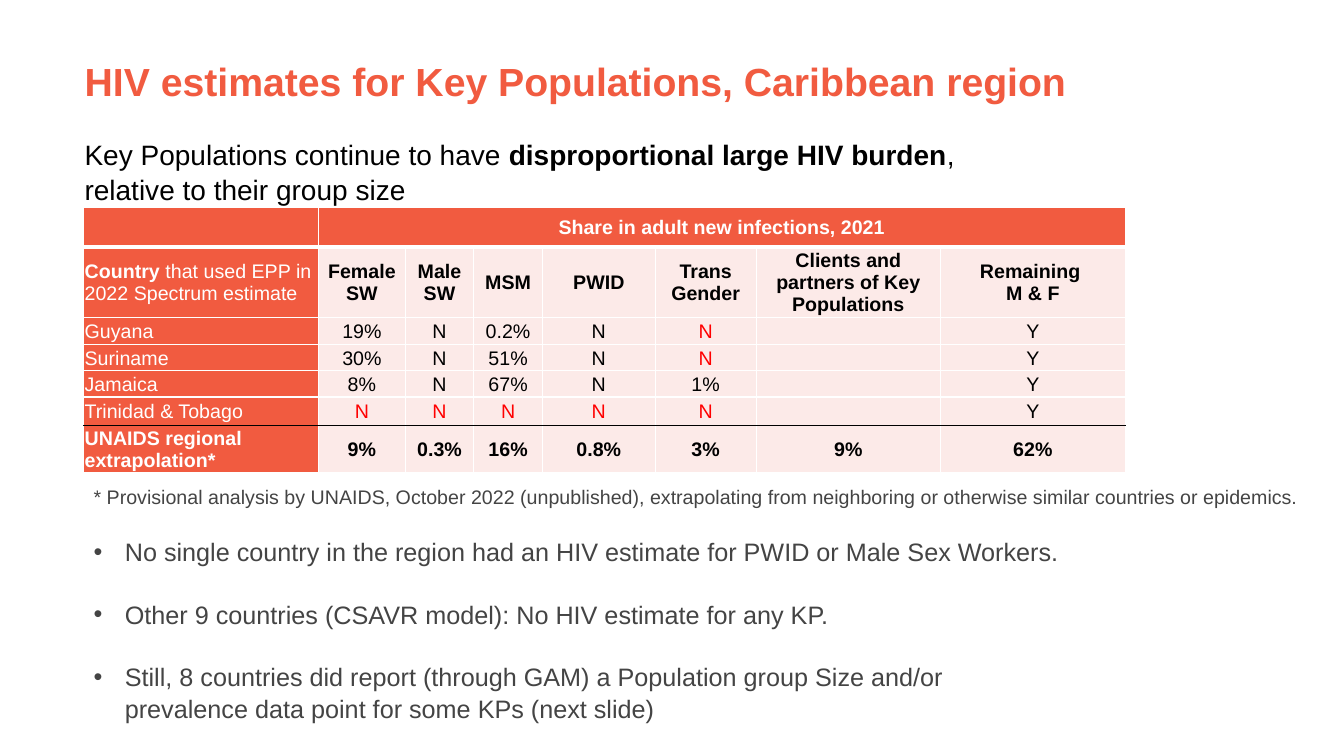
from pptx import Presentation
from pptx.dml.color import RGBColor
from pptx.enum.text import MSO_ANCHOR, MSO_AUTO_SIZE, PP_ALIGN
from pptx.oxml.ns import qn
from pptx.util import Emu, Pt
from lxml import etree

LEFT, CENTER = PP_ALIGN.LEFT, PP_ALIGN.CENTER
TOP, MIDDLE = MSO_ANCHOR.TOP, MSO_ANCHOR.MIDDLE
NO_FIT = MSO_AUTO_SIZE.NONE
TITLE_ONLY = 5
EMU_PER_PX = 9144
CORAL, BLUSH, WHITE = "F15B40", "FCEAE8", "FFFFFF"
BLACK, GREY, RED = "000000", "444444", "FF0000"

COLUMN_WIDTHS = [233, 86, 68, 68, 112, 100, 183, 183]
ROW_HEIGHTS = [39, 70, 27, 26, 26, 28, 47]
ROWS = [
    ["", "Share in adult new infections, 2021", "", "", "", "", "", ""],
    ["**Country** that used EPP in 2022 Spectrum estimate", "Female SW", "Male SW",
     "MSM", "PWID", "Trans Gender", "Clients and partners of Key Populations",
     "Remaining \nM & F"],
    ["Guyana", "19%", "N", "0.2%", "N", "N", "", "Y"],
    ["Suriname", "30%", "N", "51%", "N", "N", "", "Y"],
    ["Jamaica", "8%", "N", "67%", "N", "1%", "", "Y"],
    ["Trinidad & Tobago", "N", "N", "N", "N", "N", "", "Y"],
    ["UNAIDS regional extrapolation*", "9%", "0.3%", "16%", "0.8%", "3%", "9%", "62%"],
]
HEADER, LABELS, TRINIDAD, REGIONAL = 0, 1, 5, 6
RED_CELLS = {(2, 5), (3, 5)} | {(TRINIDAD, column) for column in range(1, 6)}
FOOTNOTE = ("* Provisional analysis by UNAIDS, October 2022 (unpublished), extrapolating "
            "from neighboring or otherwise similar countries or epidemics.")
FINDINGS = [
    ("No single country in the region had an HIV estimate for PWID or Male Sex Workers.", 19),
    ("Other 9 countries (CSAVR model): No HIV estimate for any KP.", 22),
    ("Still, 8 countries did report (through GAM) a Population group Size and/or \n"
     "prevalence data point for some KPs (next slide)", 22),
]


def px(length):
    """Turn whole pixels into EMU."""
    return Emu(length * EMU_PER_PX)


def color(value):
    """Turn a hex string into a colour."""
    return RGBColor.from_string(value)


class Page:
    """A slide together with its text and table style."""

    font = "Arial"
    line_spacing = 1.05
    indent = 31

    def __init__(self, deck):
        """Add a title-only slide to the deck."""
        self.slide = deck.slides.add_slide(deck.slide_layouts[TITLE_ONLY])

    def fill_para(self, para, text, size, ink, bold=False, align=LEFT):
        """Fill a paragraph, with double asterisks around bold spans."""
        para.alignment = align
        para.font.name = self.font
        para.font.size = Pt(size)
        para.font.color.rgb = color(ink)
        pieces = text.split("**")
        if len(pieces) == 1:
            para.font.bold = bold
        for number, piece in enumerate(pieces):
            for line_number, line in enumerate(piece.split("\n")):
                if line_number:
                    para.add_line_break()
                if line:
                    span = para.add_run()
                    span.text = line
                    if len(pieces) > 1:
                        span.font.bold = number % 2 == 1

    def frame(self, box):
        """Prepare the text frame of a box and return its first paragraph."""
        frame = box.text_frame
        frame.word_wrap = True
        frame.auto_size = NO_FIT
        frame.vertical_anchor = TOP
        para = frame.paragraphs[0]
        para.line_spacing = self.line_spacing
        return para

    def title(self, text, left, top, width, height):
        """Move and fill the title placeholder."""
        box = self.slide.shapes.title
        box.left, box.top, box.width, box.height = map(px, (left, top, width, height))
        self.fill_para(self.frame(box), text, 28, CORAL, bold=True)

    def text(self, text, left, top, width, height, size, ink):
        """Add a text box with one paragraph and return it."""
        box = self.slide.shapes.add_textbox(*map(px, (left, top, width, height)))
        self.fill_para(self.frame(box), text, size, ink)
        return box

    def bullet(self, box, text, size, ink, space_before):
        """Append a bulleted paragraph to a box."""
        para = box.text_frame.add_paragraph()
        para.line_spacing = self.line_spacing
        para.space_before = Pt(space_before)
        properties = para._p.get_or_add_pPr()
        properties.set("marL", str(px(self.indent)))
        properties.set("indent", str(-px(self.indent)))
        etree.SubElement(properties, qn("a:buFont"), typeface=self.font)
        etree.SubElement(properties, qn("a:buChar"), char="•")
        self.fill_para(para, text, size, ink)

    def border(self, cell, side, ink, width):
        """Draw one side of a cell."""
        line = etree.SubElement(cell._tc.get_or_add_tcPr(), qn(f"a:ln{side}"), w=str(Pt(width)))
        fill = etree.SubElement(line, qn("a:solidFill"))
        etree.SubElement(fill, qn("a:srgbClr"), val=ink)

    def cell(self, cell, text, fill, ink, bold, align, top_ink, bottom_ink, bottom_width):
        """Fill and outline a table cell."""
        cell.margin_left = cell.margin_top = cell.margin_right = px(1)
        cell.margin_bottom = px(0)
        cell.vertical_anchor = MIDDLE
        self.border(cell, "L", WHITE, 1)
        self.border(cell, "R", WHITE, 1)
        self.border(cell, "T", top_ink, 1)
        self.border(cell, "B", bottom_ink, bottom_width)
        cell.fill.solid()
        cell.fill.fore_color.rgb = color(fill)
        para = cell.text_frame.paragraphs[0]
        para.space_after = Pt(2)
        self.fill_para(para, text, 14, ink, bold, align)

    def table(self, rows, left, top, widths, heights):
        """Add the table of infection shares."""
        shape = self.slide.shapes.add_table(
            len(rows), len(widths), px(left), px(top), px(sum(widths)), px(sum(heights)))
        table = shape.table
        table.first_row = table.horz_banding = False
        for column, width in zip(table.columns, widths):
            column.width = px(width)
        for row, height in zip(table.rows, heights):
            row.height = px(height)
        for row, texts in enumerate(rows):
            for column, text in enumerate(texts):
                dark = row == HEADER or column == 0
                ink = RED if (row, column) in RED_CELLS else WHITE if dark else BLACK
                self.cell(
                    table.cell(row, column), text,
                    fill=CORAL if dark else BLUSH,
                    ink=ink,
                    bold=row in (HEADER, LABELS, REGIONAL),
                    align=CENTER if column else LEFT,
                    top_ink=BLACK if row == REGIONAL else WHITE,
                    bottom_ink=BLACK if row == TRINIDAD else WHITE,
                    bottom_width=3 if row == HEADER else 1)
        table.cell(HEADER, 1).merge(table.cell(HEADER, len(widths) - 1))


def main():
    """Build and save the slide."""
    deck = Presentation()
    deck.slide_width, deck.slide_height = px(1333), px(750)
    page = Page(deck)
    page.title("HIV estimates for Key Populations, Caribbean region", 74, 50, 1160, 60)
    page.text("Key Populations continue to have **disproportional large HIV burden**, \n"
              "relative to their group size", 74, 130, 1160, 77, 20, BLACK)
    page.table(ROWS, 83, 206, COLUMN_WIDTHS, ROW_HEIGHTS)
    notes = page.text(FOOTNOTE, 83, 475, 1222, 242, 14, GREY)
    for finding, space_before in FINDINGS:
        page.bullet(notes, finding, 18, GREY, space_before)
    deck.save("out.pptx")


if __name__ == "__main__":
    main()
